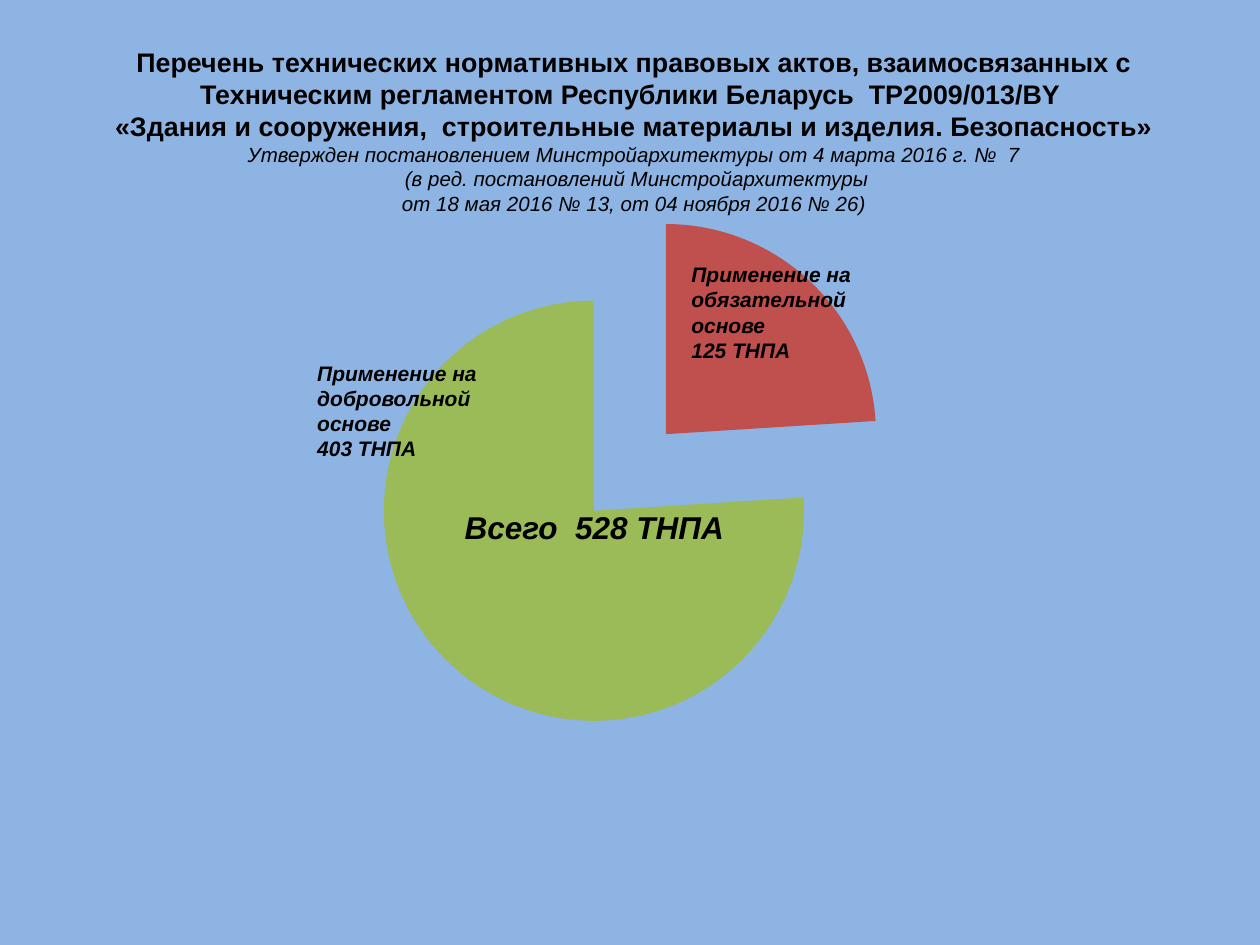
from pptx import Presentation
from pptx.chart.data import CategoryChartData
from pptx.dml.color import RGBColor
from pptx.enum.chart import XL_CHART_TYPE
from pptx.enum.text import MSO_ANCHOR, MSO_AUTO_SIZE, PP_ALIGN
from pptx.oxml import parse_xml
from pptx.oxml.ns import nsdecls
from pptx.util import Pt

PIE = XL_CHART_TYPE.PIE
MIDDLE = MSO_ANCHOR.MIDDLE
CENTER = PP_ALIGN.CENTER
NO_FIT, GROW = MSO_AUTO_SIZE.NONE, MSO_AUTO_SIZE.SHAPE_TO_FIT_TEXT

# Content: title lines as (text, size, bold, italic)
HEAD = [
    ("Перечень технических нормативных правовых актов, взаимосвязанных с "
     "Техническим регламентом Республики Беларусь  ТР2009/013/BY ", 15.3, True, False),
    ("«Здания и сооружения,  строительные материалы и изделия. Безопасность»",
     15.3, True, False),
    ("Утвержден постановлением Минстройархитектуры от 4 марта 2016 г. №  7",
     11.7, False, True),
    (" (в ред. постановлений Минстройархитектуры", 11.7, False, True),
    ("от 18 мая 2016 № 13, от 04 ноября 2016 № 26)", 11.7, False, True),
]
SLICES = [("1", 0, "4F81BD"), ("2", 24, "C0504D"), ("3", 76, "9BBB59"), ("4", 0, "8064A2")]
BURST = 25
# Labels: box in points, size, paragraphs
LABELS = [
    ((388, 146, 140.4, 65.5), 12, ["Применение на обязательной основе", "125 ТНПА"]),
    ((174.2, 202.3, 140.4, 65.5), 12, ["Применение на добровольной основе", "403 ТНПА"]),
    ((258.5, 286.6, 168.5, 28.8), 18, ["Всего  528 ТНПА"]),
]


def paint(fill, color):
    fill.solid()
    fill.fore_color.rgb = RGBColor.from_string(color)


def write(para, text, size, bold=True, italic=True):
    run = para.add_run()
    run.text = text
    font = run.font
    font.name, font.size, font.bold, font.italic = "Arial", Pt(size), bold, italic
    paint(font.fill, "000000")


def place(shape, box):
    shape.left, shape.top, shape.width, shape.height = map(Pt, box)


deck = Presentation()
deck.slide_width, deck.slide_height = Pt(720), Pt(540)
slide = deck.slides.add_slide(deck.slide_layouts[0])
paint(slide.background.fill, "8EB4E3")
sub = slide.placeholders[1].element
sub.getparent().remove(sub)

# Title
title = slide.shapes.title
place(title, (56.2, 16.6, 612, 115.9))
frame = title.text_frame
frame.auto_size = NO_FIT
frame.vertical_anchor = MIDDLE
para = frame.paragraphs[0]
para.alignment = CENTER
for i, line in enumerate(HEAD):
    if i:
        para.add_line_break()
    write(para, *line)

# Pie chart
data = CategoryChartData()
data.categories = [name for name, _, _ in SLICES]
data.add_series("Series 1", [value for _, value, _ in SLICES])
chart = slide.shapes.add_chart(PIE, Pt(120), Pt(110), Pt(480), Pt(320), data).chart
chart.has_title = chart.has_legend = False
chart.font.name, chart.font.size = "Calibri", Pt(18)
paint(chart.font.fill, "000000")
plot = chart.plots[0]
plot.vary_by_categories = True
pie = plot.series[0]
for i, (_, _, color) in enumerate(SLICES):
    paint(pie.points[i].format.fill, color)
burst = parse_xml(f'<c:explosion {nsdecls("c")} val="{BURST}"/>')
pie._element.find("{*}dPt").addprevious(burst)

# Labels
for box, size, lines in LABELS:
    label = slide.shapes.add_textbox(*map(Pt, box))
    frame = label.text_frame
    frame.word_wrap = True
    frame.auto_size = GROW
    for i, line in enumerate(lines):
        para = frame.add_paragraph() if i else frame.paragraphs[0]
        write(para, line, size)

deck.save("out.pptx")
